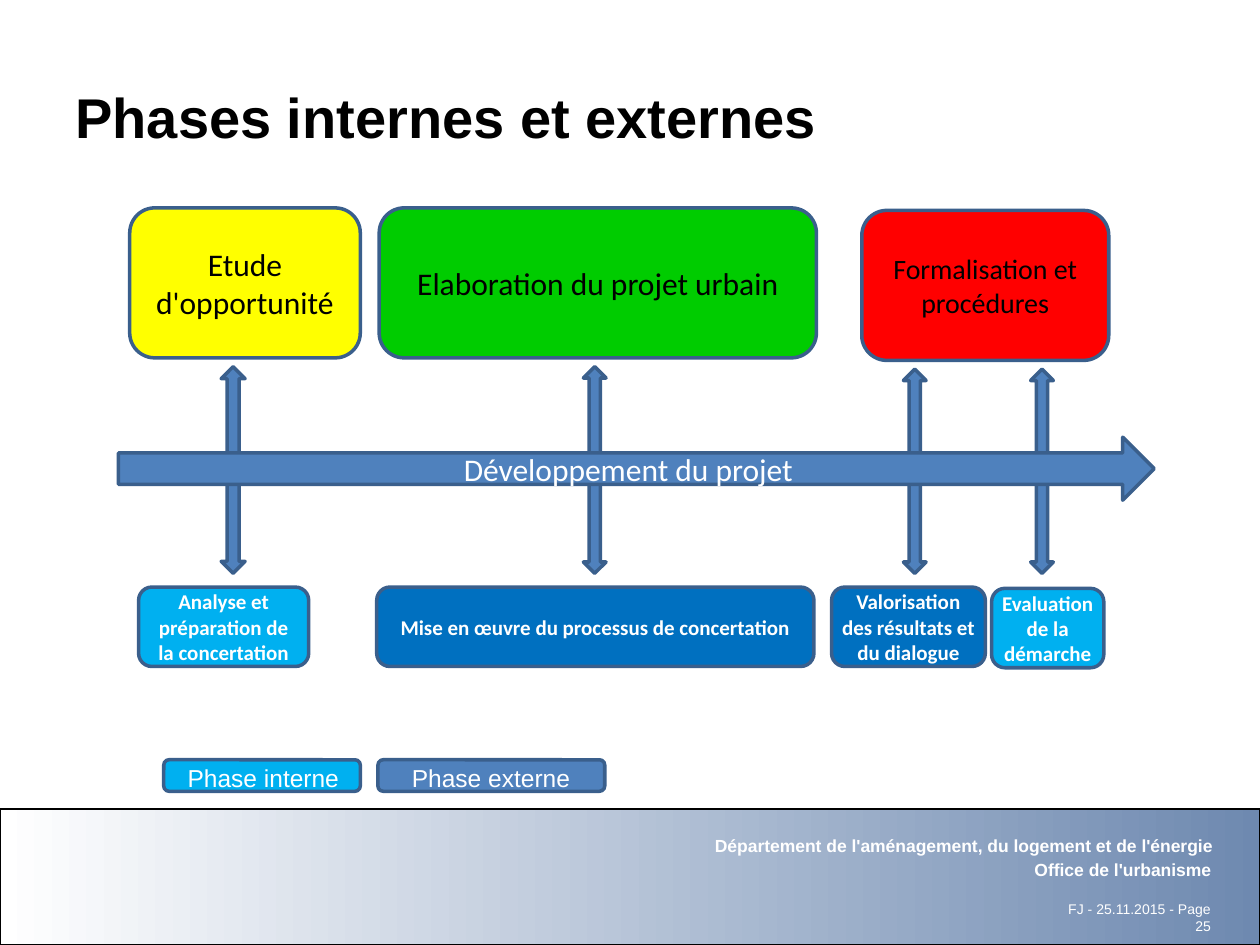
from pptx import Presentation
from pptx.dml.color import RGBColor
from pptx.enum.shapes import MSO_SHAPE
from pptx.enum.text import MSO_ANCHOR, MSO_AUTO_SIZE, PP_ALIGN
from pptx.util import Inches, Pt

RECTANGLE = MSO_SHAPE.RECTANGLE
ROUNDED = MSO_SHAPE.ROUNDED_RECTANGLE
DOUBLE_ARROW = MSO_SHAPE.LEFT_RIGHT_ARROW
RIGHT_ARROW = MSO_SHAPE.RIGHT_ARROW
TOP, MIDDLE = MSO_ANCHOR.TOP, MSO_ANCHOR.MIDDLE
LEFT, CENTER, RIGHT = PP_ALIGN.LEFT, PP_ALIGN.CENTER, PP_ALIGN.RIGHT
GROW = MSO_AUTO_SIZE.SHAPE_TO_FIT_TEXT
NO_FIT = MSO_AUTO_SIZE.NONE

BLACK = RGBColor(0x00, 0x00, 0x00)
WHITE = RGBColor(0xFF, 0xFF, 0xFF)
STEEL = RGBColor(0x6E, 0x89, 0xB0)
OUTLINE = RGBColor(0x3A, 0x5F, 0x8C)
BLUE = RGBColor(0x4F, 0x81, 0xBD)
LIGHT_BLUE = RGBColor(0x00, 0xB0, 0xF0)
DARK_BLUE = RGBColor(0x00, 0x70, 0xC0)
GREEN = RGBColor(0x00, 0xCC, 0x00)
YELLOW = RGBColor(0xFF, 0xFF, 0x00)
RED = RGBColor(0xFF, 0x00, 0x00)

TITLE = {"name": "Arial", "size": Pt(32), "bold": True, "color": BLACK}
OFFICE = {"name": "Arial", "size": Pt(10), "bold": True, "color": WHITE}
PAGE = {"name": "Arial", "size": Pt(8), "color": WHITE}
LEGEND = {"name": "Arial", "size": Pt(14), "color": WHITE}
PHASE = {"name": "Calibri", "size": Pt(18), "color": BLACK}
SMALL_PHASE = {**PHASE, "size": Pt(16)}
AXIS = {**PHASE, "color": WHITE}
STEP = {"name": "Calibri", "size": Pt(12), "bold": True, "color": WHITE}


class PhaseSlide:
    def __init__(self, deck):
        self.slide = deck.slides.add_slide(deck.slide_layouts[6])

    def fill_text(self, frame, text, style, align, anchor):
        frame.word_wrap = True
        frame.vertical_anchor = anchor
        para = frame.paragraphs[0]
        para.alignment = align
        span = para.add_run()
        span.text = text
        for key, value in style.items():
            if key == "color":
                span.font.color.rgb = value
            else:
                setattr(span.font, key, value)

    def shape(self, kind, place, color, line=OUTLINE, width=2, parent=None):
        shapes = (parent or self.slide).shapes
        box = shapes.add_shape(kind, *map(Inches, place))
        box.shadow.inherit = False
        box.fill.solid()
        box.fill.fore_color.rgb = color
        box.line.color.rgb = line
        box.line.width = Pt(width)
        return box

    def band(self, place, colors):
        box = self.shape(RECTANGLE, place, WHITE, BLACK, 1)
        box.fill.gradient()
        box.fill.gradient_angle = 0
        for stop, color, position in zip(box.fill.gradient_stops, colors, (0, 1)):
            stop.color.rgb = color
            stop.position = position

    def label(self, place, text, style, align=RIGHT, anchor=TOP, fit=NO_FIT, parent=None):
        box = (parent or self.slide).shapes.add_textbox(*map(Inches, place))
        self.fill_text(box.text_frame, text, style, align, anchor)
        box.text_frame.auto_size = fit
        return box

    def block(self, place, text, style, color, kind=ROUNDED, side=0.1):
        box = self.shape(kind, place, color)
        self.fill_text(box.text_frame, text, style, CENTER, MIDDLE)
        box.text_frame.margin_left = box.text_frame.margin_right = Inches(side)

    def vertical_arrow(self, center, middle, length, thickness):
        place = (center - length / 2, middle - thickness / 2, length, thickness)
        self.shape(DOUBLE_ARROW, place, BLUE).rotation = 270

    def legend(self, left, width, text, text_left, text_width, color):
        group = self.slide.shapes.add_group_shape()
        self.shape(ROUNDED, (left, 6.03, width, 0.25), color, parent=group)
        place = (text_left, 6.01, text_width, 0.34)
        box = self.label(place, text, LEGEND, LEFT, fit=GROW, parent=group)
        box.text_frame.word_wrap = False


def main():
    deck = Presentation()
    deck.slide_width, deck.slide_height = Inches(10), Inches(7.5)
    page = PhaseSlide(deck)

    page.band((0, 6.42, 10, 1.08), (WHITE, STEEL))
    page.label((8.34, 7.1, 1.37, 0.37), "FJ - 25.11.2015 - Page 25", PAGE, fit=GROW)
    page.label((0.5, 0.3, 9, 1.25), "Phases internes et externes", TITLE, LEFT, MIDDLE)
    page.label((1.53, 6.77, 8.18, 0.11), "Office de l'urbanisme", OFFICE)
    page.label((1.52, 6.58, 8.2, 0.12),
               "Département de l'aménagement, du logement et de l'énergie", OFFICE)

    for left, top, width, text, color, side in (
        (1.1, 4.66, 1.35, "Analyse et préparation de la concertation", LIGHT_BLUE, 0.1),
        (2.99, 4.66, 3.47, "Mise en œuvre du processus de concertation", DARK_BLUE, 0.1),
        (6.6, 4.66, 1.22, "Valorisation des résultats et du dialogue", DARK_BLUE, 0.04),
        (7.87, 4.67, 0.89, "Evaluation de la démarche", LIGHT_BLUE, 0.04),
    ):
        page.block((left, top, width, 0.63), text, STEP, color, side=side)

    for center, middle, length, thickness in (
        (1.85, 3.73, 1.64, 0.19),
        (4.72, 3.73, 1.64, 0.18),
        (7.26, 3.74, 1.62, 0.18),
        (8.27, 3.74, 1.62, 0.18),
    ):
        page.vertical_arrow(center, middle, length, thickness)

    for left, top, width, text, style, color in (
        (3.01, 1.65, 3.47, "Elaboration du projet urbain", PHASE, GREEN),
        (1.03, 1.65, 1.83, "Etude d'opportunité", PHASE, YELLOW),
        (6.84, 1.67, 1.96, "Formalisation et procédures", SMALL_PHASE, RED),
    ):
        page.block((left, top, width, 1.19), text, style, color)

    page.block((0.94, 3.47, 8.22, 0.5), "Développement du projet", AXIS, BLUE, RIGHT_ARROW)

    page.legend(1.3, 1.56, "Phase interne", 1.39, 1.41, LIGHT_BLUE)
    page.legend(3, 1.8, "Phase externe", 3.17, 1.46, BLUE)

    deck.save("out.pptx")


if __name__ == "__main__":
    main()
